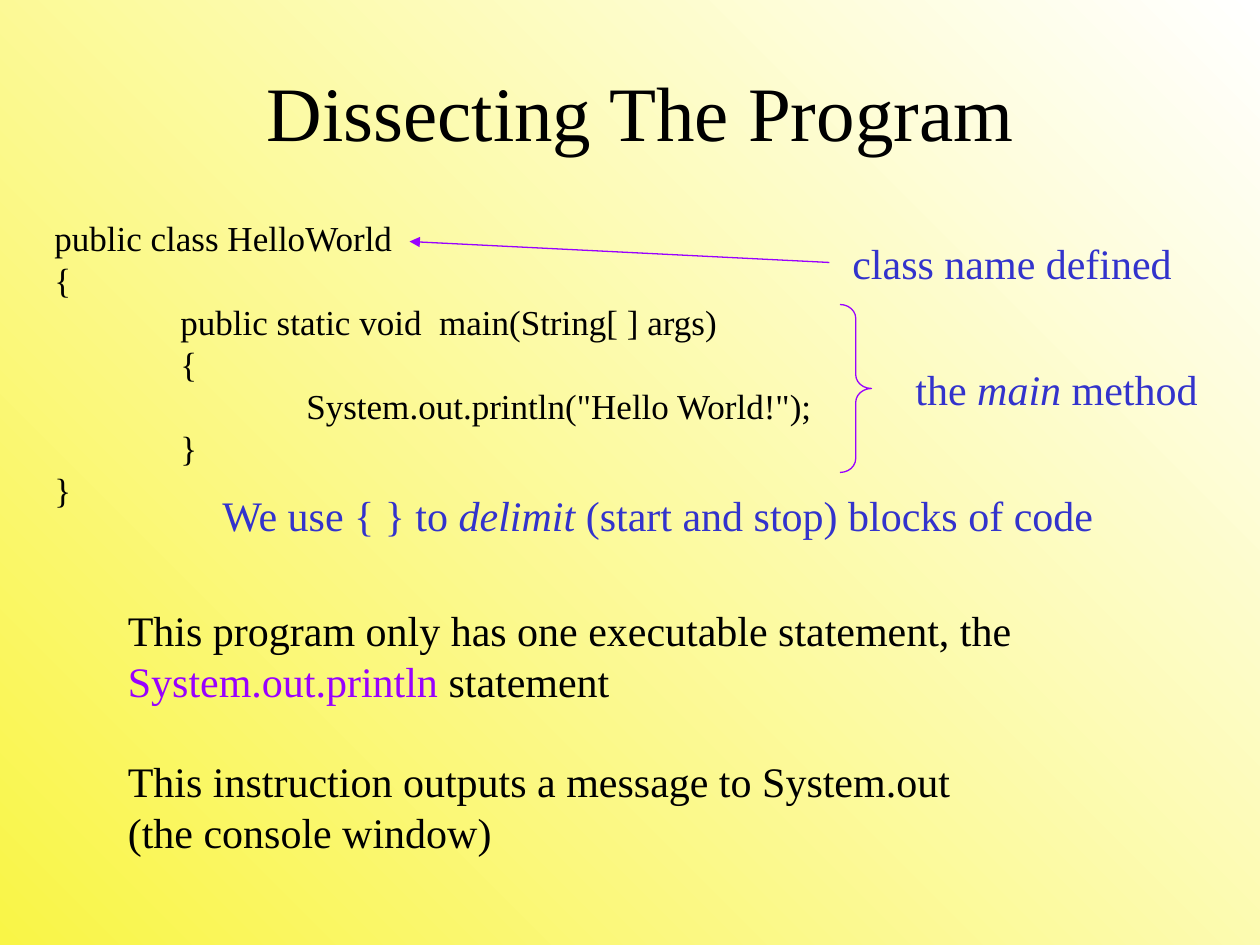
from dataclasses import dataclass

from lxml import etree
from pptx import Presentation
from pptx import util as u
from pptx.dml.color import RGBColor
from pptx.enum import shapes, text
from pptx.oxml.ns import qn

PX = 9525
FONT = "Times New Roman"
BLACK = RGBColor(0x00, 0x00, 0x00)
BLUE = RGBColor(0x33, 0x33, 0xCC)
PURPLE = RGBColor(0x99, 0x00, 0xFF)
YELLOW = RGBColor(0xF9, 0xF5, 0x47)
WHITE = RGBColor(0xFF, 0xFF, 0xFF)


@dataclass(frozen=True)
class Span:
    words: str
    italic: bool | None = None
    color: RGBColor | None = None


@dataclass(frozen=True)
class Line:
    spans: tuple[Span, ...]
    gap_before: float = 0


@dataclass(frozen=True)
class Passage:
    left: int
    top: int
    width: int
    height: int
    lines: tuple[Line, ...]
    size: int = 24
    color: RGBColor = BLACK
    wrap: bool = False
    align: text.PP_ALIGN = text.PP_ALIGN.LEFT
    anchor: text.MSO_ANCHOR = text.MSO_ANCHOR.TOP
    tab_stops: tuple[int, ...] = ()


def px(length: int) -> u.Emu:
    return u.Emu(length * PX)


def plain(words: str, gap_before: float = 0) -> Line:
    return Line((Span(words),), gap_before)


def set_tab_stops(paragraph, stops: tuple[int, ...]) -> None:
    properties = paragraph._p.get_or_add_pPr()
    tab_list = etree.Element(qn("a:tabLst"))
    for stop in stops:
        etree.SubElement(tab_list, qn("a:tab"), pos=str(px(stop)), algn="l")
    properties.find(qn("a:defRPr")).addprevious(tab_list)


def add_passage(slide, passage: Passage) -> None:
    box = slide.shapes.add_textbox(
        px(passage.left), px(passage.top), px(passage.width), px(passage.height)
    )
    frame = box.text_frame
    frame.word_wrap = passage.wrap
    if not passage.wrap:
        frame.auto_size = text.MSO_AUTO_SIZE.SHAPE_TO_FIT_TEXT
    frame.vertical_anchor = passage.anchor
    for index, line in enumerate(passage.lines):
        paragraph = frame.paragraphs[0] if index == 0 else frame.add_paragraph()
        paragraph.alignment = passage.align
        paragraph.line_spacing = u.Pt(passage.size * 1.2)
        paragraph.space_before = u.Pt(line.gap_before)
        paragraph.font.name = FONT
        paragraph.font.size = u.Pt(passage.size)
        paragraph.font.color.rgb = passage.color
        if passage.tab_stops:
            set_tab_stops(paragraph, passage.tab_stops)
        for span in line.spans:
            run = paragraph.add_run()
            run.text = span.words
            run.font.italic = span.italic
            if span.color is not None:
                run.font.color.rgb = span.color


def add_arrow(slide, start: tuple[int, int], end: tuple[int, int]) -> None:
    arrow = slide.shapes.add_connector(
        shapes.MSO_CONNECTOR.STRAIGHT, *map(px, start + end)
    )
    arrow.line.color.rgb = PURPLE
    arrow.line.width = u.Pt(0.75)
    outline = arrow.line._get_or_add_ln()
    etree.SubElement(outline, qn("a:tailEnd"), type="triangle")
    etree.SubElement(arrow._element.spPr, qn("a:effectLst"))


def add_brace(slide, left: int, top: int, width: int, height: int) -> None:
    brace = slide.shapes.add_shape(
        shapes.MSO_SHAPE.RIGHT_BRACE, px(left), px(top), px(width), px(height)
    )
    brace.adjustments[0] = 0.44
    brace.shadow.inherit = False
    brace.fill.background()
    brace.line.color.rgb = PURPLE
    brace.line.width = u.Pt(0.75)


def paint_background(slide) -> None:
    fill = slide.background.fill
    fill.gradient()
    fill.gradient_angle = 45
    for stop, color in zip(fill.gradient_stops, (YELLOW, WHITE)):
        stop.color.rgb = color


TITLE = Passage(
    80, 24, 816, 120, (plain("Dissecting The Program"),), size=44, wrap=True,
    align=text.PP_ALIGN.CENTER, anchor=text.MSO_ANCHOR.MIDDLE,
)
CLASS_NOTE = Passage(640, 176, 264, 48, (plain("class name defined"),), color=BLUE)
BLOCK_NOTE = Passage(
    160, 368, 684, 48,
    (Line((
        Span("We use { } to "),
        Span("delimit ", italic=True),
        Span("(start and stop) blocks of code"),
    )),),
    color=BLUE,
)
METHOD_NOTE = Passage(
    688, 272, 234, 48,
    (Line((Span("the "), Span("main ", italic=True), Span("method"))),),
    color=BLUE,
)
EXPLANATION = Passage(
    88, 456, 768, 202,
    (
        Line((
            Span("This program only has one executable statement, the "),
            Span("System.out.println", color=PURPLE),
            Span(" statement"),
        )),
        plain("This instruction outputs a message to System.out", gap_before=28.8),
        plain("(the console window)"),
    ),
    wrap=True,
)
CODE = Passage(
    32, 160, 597, 233,
    (
        plain("public class HelloWorld"),
        plain("{"),
        plain("\tpublic static void  main(String[ ] args)"),
        plain("\t{"),
        plain('\t\tSystem.out.println("Hello World!");'),
        plain("\t}"),
        plain("}"),
    ),
    size=20,
    tab_stops=(96, 192),
)


def main() -> None:
    deck = Presentation()
    deck.slide_width, deck.slide_height = px(960), px(720)
    slide = deck.slides.add_slide(deck.slide_layouts[6])
    paint_background(slide)
    for passage in (TITLE, CLASS_NOTE, BLOCK_NOTE, METHOD_NOTE, EXPLANATION, CODE):
        add_passage(slide, passage)
    add_arrow(slide, start=(632, 200), end=(312, 184))
    add_brace(slide, 640, 232, 24, 128)
    deck.save("out.pptx")


if __name__ == "__main__":
    main()
